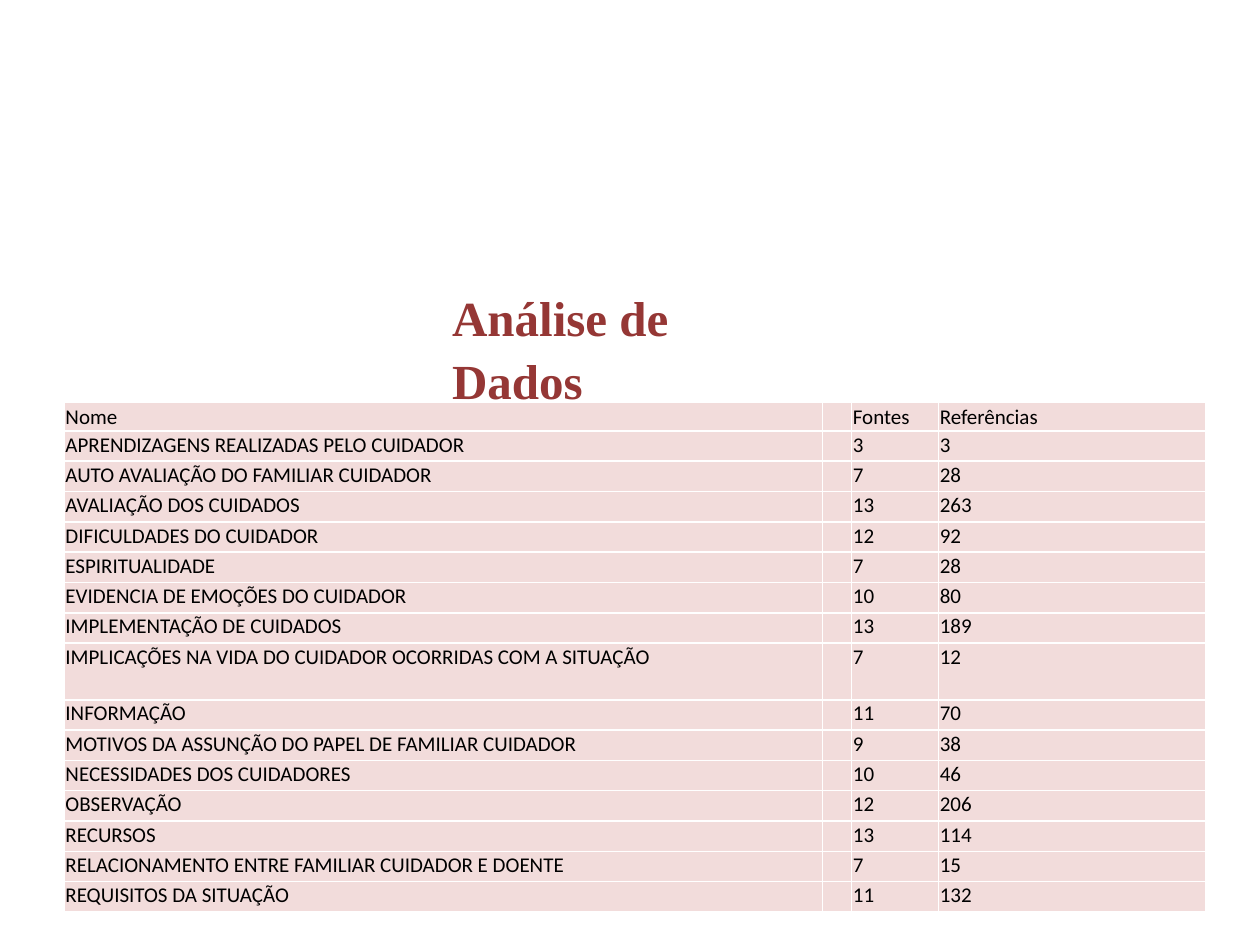
from lxml.etree import SubElement
from pptx import Presentation
from pptx.dml.color import RGBColor
from pptx.enum.text import MSO_ANCHOR as Anchor
from pptx.oxml.ns import qn
from pptx.util import Inches, Pt

TITLE = "Análise de Dados"
HEADER = ("Nome", "Fontes", "Referências")
THEMES = [
    ("APRENDIZAGENS REALIZADAS PELO CUIDADOR", 3, 3),
    ("AUTO AVALIAÇÃO DO FAMILIAR CUIDADOR", 7, 28),
    ("AVALIAÇÃO DOS CUIDADOS", 13, 263),
    ("DIFICULDADES DO CUIDADOR", 12, 92),
    ("ESPIRITUALIDADE", 7, 28),
    ("EVIDENCIA DE EMOÇÕES DO CUIDADOR", 10, 80),
    ("IMPLEMENTAÇÃO DE CUIDADOS", 13, 189),
    ("IMPLICAÇÕES NA VIDA DO CUIDADOR OCORRIDAS COM A SITUAÇÃO", 7, 12),
    ("INFORMAÇÃO", 11, 70),
    ("MOTIVOS DA ASSUNÇÃO DO PAPEL DE FAMILIAR CUIDADOR", 9, 38),
    ("NECESSIDADES DOS CUIDADORES", 10, 46),
    ("OBSERVAÇÃO", 12, 206),
    ("RECURSOS", 13, 114),
    ("RELACIONAMENTO ENTRE FAMILIAR CUIDADOR E DOENTE", 7, 15),
    ("REQUISITOS DA SITUAÇÃO", 11, 132),
]

WINE = RGBColor(0x95, 0x37, 0x35)
PINK = RGBColor(0xF2, 0xDC, 0xDB)
WHITE = RGBColor(0xFF, 0xFF, 0xFF)
BLACK = RGBColor(0, 0, 0)

COLUMNS = (6.02, 0.23, 0.69, 2.12)
LEFT, TOP, HEIGHT = 0.51, 3.19, 4.05
HEADER_ROW, TALL_ROW = 0.23, 0.45
TALL_INDEX = 8
INSET = Inches(0.01)


def add_title(s):
    sp = s.shapes.add_textbox(Inches(3.49), Inches(2.2), Inches(2.95), Inches(0.57))
    tf = sp.text_frame
    tf.word_wrap = True
    p = tf.paragraphs[0]
    p.text = TITLE
    p.line_spacing = 1.07
    p.font.name, p.font.size, p.font.bold = "Times New Roman", Pt(28), True
    p.font.color.rgb = WINE


def set_borders(cell):
    tc_pr = cell._tc.get_or_add_tcPr()
    for i, side in enumerate(("lnL", "lnR", "lnT", "lnB")):
        ln = tc_pr.makeelement(qn("a:" + side), {"w": str(Pt(1))})
        fill = SubElement(ln, qn("a:solidFill"))
        SubElement(fill, qn("a:srgbClr"), val=str(WHITE))
        tc_pr.insert(i, ln)


def fill_cell(cell, text, anchor):
    cell.fill.solid()
    cell.fill.fore_color.rgb = PINK
    set_borders(cell)
    cell.margin_left = cell.margin_right = cell.margin_top = INSET
    cell.margin_bottom = 0
    cell.vertical_anchor = anchor
    p = cell.text_frame.paragraphs[0]
    p.text = text
    p.font.name, p.font.size = "Calibri", Pt(12)
    p.font.color.rgb = BLACK
    if not text:  # an empty cell takes its line height from the end mark
        SubElement(p._p, qn("a:endParaRPr"), sz="1200")


def add_theme_table(s):
    rows = [HEADER, *THEMES]
    row_height = (HEIGHT - HEADER_ROW - TALL_ROW) / (len(rows) - 2)
    special = {0: HEADER_ROW, TALL_INDEX: TALL_ROW}
    table = s.shapes.add_table(len(rows), len(COLUMNS), Inches(LEFT), Inches(TOP),
                               Inches(sum(COLUMNS)), Inches(HEIGHT)).table
    for column, width in zip(table.columns, COLUMNS):
        column.width = Inches(width)
    for i, (name, sources, references) in enumerate(rows):
        table.rows[i].height = Inches(special.get(i, row_height))
        anchor = Anchor.TOP if i else Anchor.MIDDLE
        for j, value in enumerate((name, "", sources, references)):
            fill_cell(table.cell(i, j), str(value), anchor)


def main():
    prs = Presentation()
    prs.slide_width, prs.slide_height = Inches(10), Inches(7.5)
    s = prs.slides.add_slide(prs.slide_layouts[6])
    add_title(s)
    add_theme_table(s)
    prs.save("out.pptx")


if __name__ == "__main__":
    main()
